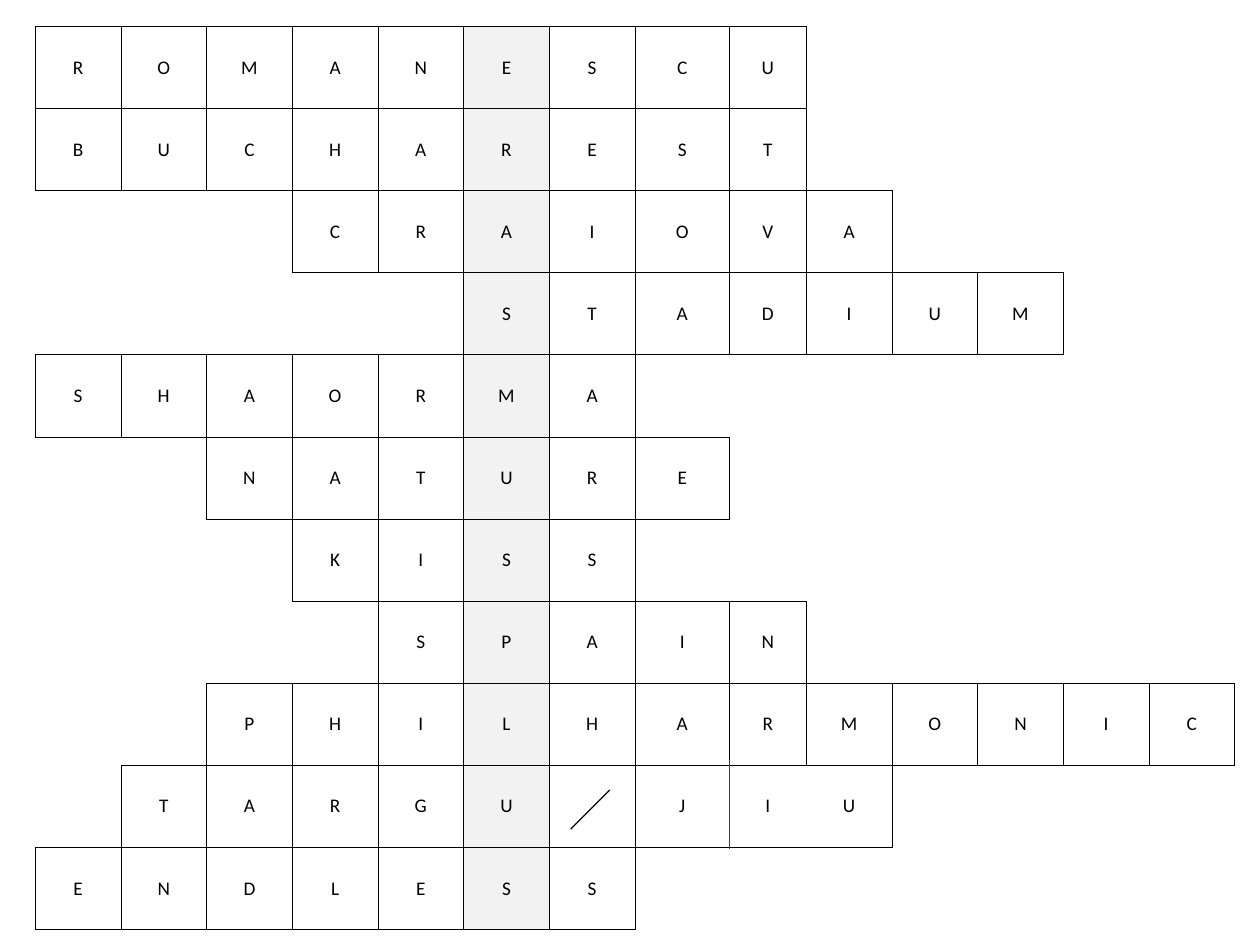
from lxml import etree
from pptx import Presentation, util as u
from pptx.dml.color import RGBColor
from pptx.enum import shapes, text
from pptx.oxml.ns import qn

BLACK = RGBColor(0x00, 0x00, 0x00)
DARK_GREY = RGBColor(0x40, 0x40, 0x40)
LIGHT_GREY = RGBColor(0xF2, 0xF2, 0xF2)
NO_GRID_STYLE = "{2D5ABB26-0587-4C30-8999-92F81FD0307C}"

# Start column and answer; a space is a struck-out square.
ANSWERS = [
    (0, "ROMANESCU"),
    (0, "BUCHAREST"),
    (3, "CRAIOVA"),
    (5, "STADIUM"),
    (0, "SHAORMA"),
    (2, "NATURE"),
    (3, "KISS"),
    (4, "SPAIN"),
    (2, "PHILHARMONIC"),
    (1, "TARGU JIU"),
    (0, "ENDLESS"),
]
KEY_COLUMN = 5
COLUMN_WIDTHS = [0.68] * 7 + [0.75, 0.61] + [0.68] * 5
SIDES = {"lnL": (0, -1), "lnR": (0, 1), "lnT": (-1, 0), "lnB": (1, 0)}
# Neighbouring squares with no border between them.
OPEN_PAIRS = [{(9, 7), (9, 8)}, {(9, 8), (9, 9)}]


class CrosswordPage:
    def __init__(self, page, font="Calibri", size=11, border=0.5):
        self.page = page
        self.font = font
        self.size = size
        self.border = border

    def crossword(self, left, top, height):
        rows, columns = len(ANSWERS), len(COLUMN_WIDTHS)
        frame = self.page.shapes.add_table(
            rows, columns, u.Inches(left), u.Inches(top),
            u.Inches(sum(COLUMN_WIDTHS)), u.Inches(height))
        table = frame.table
        table.first_row = table.horz_banding = False
        style = next(frame._element.iter(qn("a:tableStyleId")))
        style.text = NO_GRID_STYLE
        for column, width in zip(table.columns, COLUMN_WIDTHS):
            column.width = u.Inches(width)
        for row in table.rows:
            row.height = u.Inches(height / rows)

        letters = {(row, start + offset): letter
                   for row, (start, answer) in enumerate(ANSWERS)
                   for offset, letter in enumerate(answer)}
        for row in range(rows):
            for column in range(columns):
                place = (row, column)
                cell = table.cell(row, column)
                self.cell_borders(cell, place, letters)
                if place in letters and column == KEY_COLUMN:
                    cell.fill.solid()
                    cell.fill.fore_color.rgb = LIGHT_GREY
                else:
                    cell.fill.background()
                self.letter(cell, letters.get(place, "").strip())

    def cell_borders(self, cell, place, letters):
        """Draw each side that touches a square, unless the pair is open."""
        properties = cell._tc.get_or_add_tcPr()
        for tag, (down, across) in SIDES.items():
            neighbour = (place[0] + down, place[1] + across)
            drawn = place in letters or neighbour in letters
            line = etree.SubElement(properties, qn(f"a:{tag}"))
            if drawn and {place, neighbour} not in OPEN_PAIRS:
                line.set("w", str(u.Pt(self.border)))
                fill = etree.SubElement(line, qn("a:solidFill"))
                etree.SubElement(fill, qn("a:srgbClr"), val=str(BLACK))
            else:
                etree.SubElement(line, qn("a:noFill"))

    def letter(self, cell, letter):
        cell.margin_left = cell.margin_right = 0
        cell.margin_top = cell.margin_bottom = 0
        cell.vertical_anchor = text.MSO_ANCHOR.MIDDLE
        para = cell.text_frame.paragraphs[0]
        para.text = letter
        para.alignment = text.PP_ALIGN.CENTER
        for span in para.runs:
            span.font.name = self.font
            span.font.size = u.Pt(self.size)
            span.font.color.rgb = BLACK

    def line(self, start, end, color, width):
        ends = [u.Inches(value) for value in (*start, *end)]
        line = self.page.shapes.add_connector(
            shapes.MSO_CONNECTOR.STRAIGHT, *ends)
        line.line.color.rgb = color
        line.line.width = u.Pt(width)
        etree.SubElement(line._element.spPr, qn("a:effectLst"))


def main():
    deck = Presentation()
    deck.slide_width, deck.slide_height = u.Inches(10), u.Inches(7.5)
    crossword = CrosswordPage(deck.slides.add_slide(deck.slide_layouts[6]))
    crossword.crossword(0.28, 0.21, 7.17)
    crossword.line((4.53, 6.58), (4.84, 6.27), BLACK, 0.75)
    crossword.line((5.79, 6.03), (5.79, 6.74), DARK_GREY, 0.5)
    deck.save("out.pptx")


if __name__ == "__main__":
    main()
